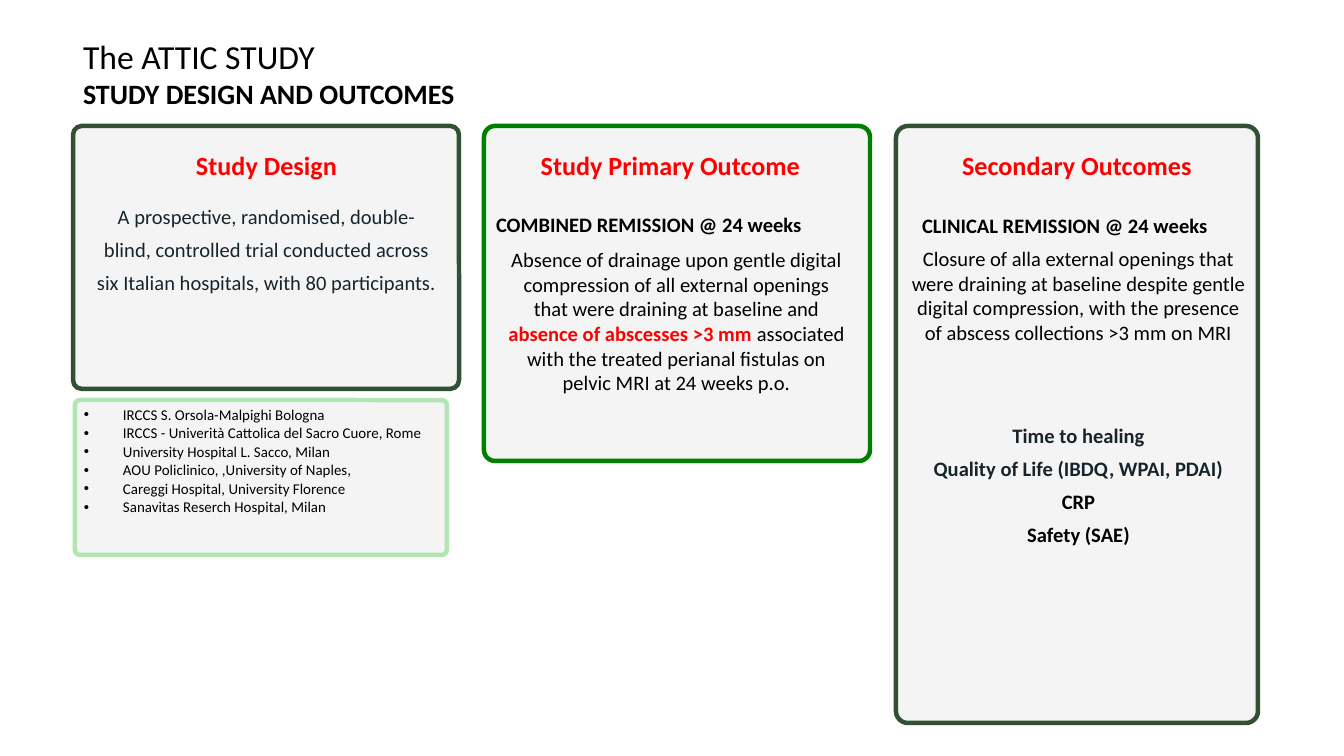
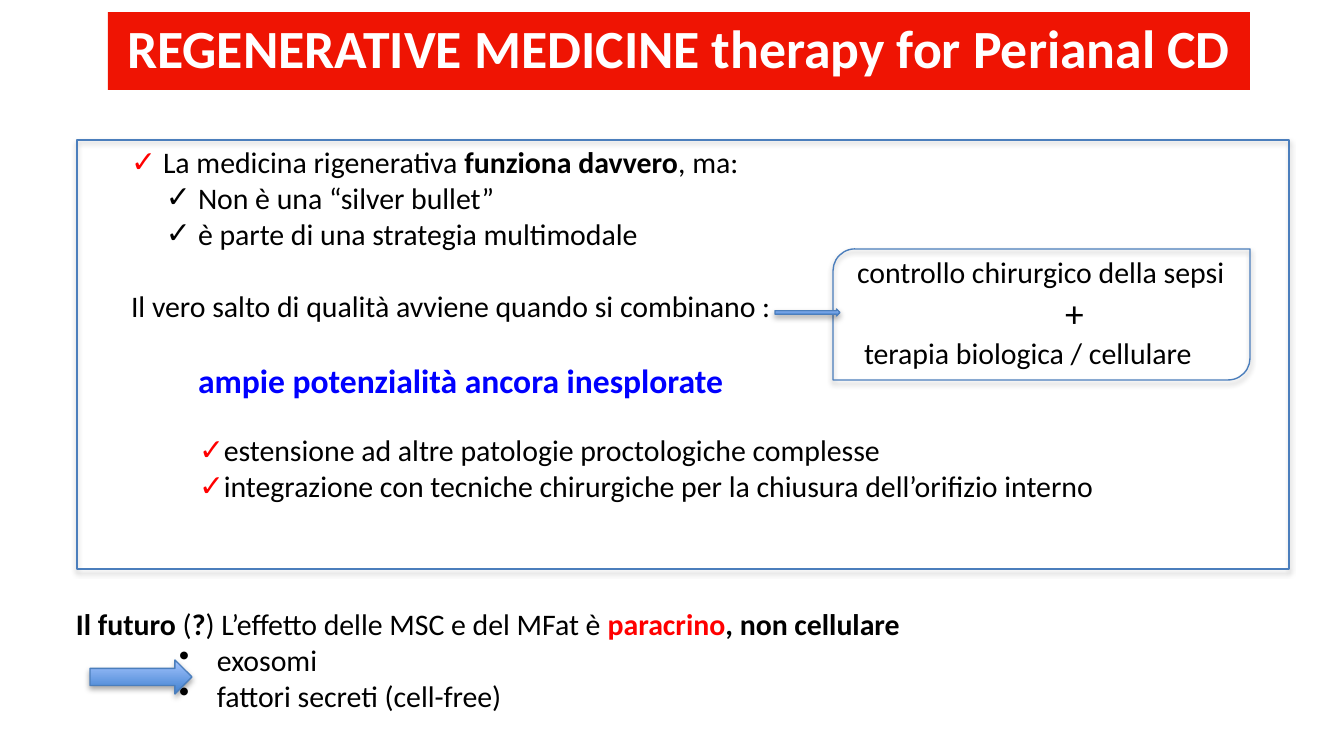
import pptx
import pptx.util
import pptx.dml.color
import pptx.enum.shapes
import pptx.enum.text
import pptx.oxml.ns
from lxml import etree

PX = 914400 / 134.4
FONT = "Calibri"
COLOURS = {
    "black": "000000", "white": "FFFFFF", "ink": "18242B", "red": "FF0000",
    "banner": "EF1403", "panel": "F4F4F4", "forest": "325034", "green": "008000",
    "mint": "B2E5B2", "blue": "0000FF", "outline": "4B7EBC",
    "arrow_low": "3F80CE", "arrow_high": "A4C4FF",
}
FLUSH = (0, 0, 0, 0)
SNUG = (9, 5, 9, 5)
ROOMY = (13, 7, 13, 7)
SHAPE = pptx.enum.shapes.MSO_SHAPE
ANCHOR = pptx.enum.text.MSO_ANCHOR

STUDY_TITLE = [
    {"text": "The ATTIC STUDY", "size": 18},
    {"text": "STUDY DESIGN AND OUTCOMES", "size": 15, "bold": True},
]
CARDS = [
    ("Study Design", (73, 126, 386, 263), (136, 149, 261, 32), "forest"),
    ("Study Primary Outcome", (484, 126, 386, 335), (540, 149, 261, 32), "green"),
    ("Secondary Outcomes", (896, 126, 362, 597), (939, 149, 276, 32), "forest"),
]
DESIGN = ("A prospective, randomised, double-blind, controlled trial conducted "
          "across six Italian hospitals, with 80 participants.")
HOSPITALS = [
    "IRCCS S. Orsola-Malpighi Bologna",
    "IRCCS - Univerità Cattolica del Sacro Cuore, Rome",
    "University Hospital L. Sacco, Milan",
    "AOU Policlinico, ,University of Naples,",
    "Careggi Hospital, University Florence",
    "Sanavitas Reserch Hospital, Milan",
]
LABELS = [
    ("COMBINED REMISSION @ 24 weeks", (487, 207, 382, 35)),
    ("CLINICAL REMISSION @ 24 weeks", (913, 208, 382, 35)),
]
PRIMARY = [
    "Absence of drainage upon gentle digital compression of all external "
    "openings that were draining at baseline and",
    [("absence of abscesses >3 mm ", True, "red"),
     ("associated with the treated perianal fistulas on pelvic MRI at 24 weeks p.o.", False, "black")],
]
CLINICAL = ("Closure of alla external openings that were draining at baseline despite gentle "
            "digital compression, with the presence of abscess collections >3 mm on MRI")
OTHER_OUTCOMES = [
    ("Time to healing", "ink"),
    ("Quality of Life (IBDQ, WPAI, PDAI)", "ink"),
    ("CRP", "black"),
    ("Safety (SAE)", "black"),
]

THERAPY_TITLE = "REGENERATIVE MEDICINE therapy for Perianal CD"
CHECK = {"bullet": "✓", "margin": 67, "hang": 32}
RED_CHECK = {"bullet": "✓", "bullet_colour": "red"}
THERAPY_POINTS = [
    {"text": [("La medicina rigenerativa ", False, "black"), ("funziona davvero", True, "black"),
              (", ma:", False, "black")], "margin": 32, "hang": 32, **RED_CHECK},
    {"text": "Non è una “silver bullet”", **CHECK},
    {"text": "è parte di una strategia multimodale", **CHECK},
    {"text": "Il vero salto di qualità avviene quando si combinano :", "before": 19.5},
    {"text": "ampie potenzialità ancora inesplorate", "size": 18, "bold": True,
     "colour": "blue", "margin": 67, "before": 19.5},
    {"text": "estensione ad altre patologie proctologiche complesse",
     "margin": 92, "hang": 24, "before": 17, **RED_CHECK},
    {"text": "integrazione con tecniche chirurgiche per la chiusura dell’orifizio interno",
     "margin": 92, "hang": 24, **RED_CHECK},
]
COMBINATION = [
    {"text": "controllo chirurgico della sepsi", "margin": 128},
    {"text": "+", "size": 20, "margin": 336},
    {"text": "terapia biologica / cellulare", "margin": 135},
]
DOT = {"bullet": "•", "margin": 141, "hang": 38}
FUTURE = [
    {"text": [("Il futuro ", True, "black"), ("(", False, "black"), ("?", True, "black"),
              (") L’effetto delle MSC e del MFat è ", False, "black"),
              ("paracrino", True, "red"), (", non cellulare", True, "black")]},
    {"text": "exosomi", **DOT},
    {"text": "fattori secreti (cell-free)", **DOT},
]


def px(n):
    return pptx.util.Emu(round(n * PX))


def rgb(name):
    return pptx.dml.color.RGBColor.from_string(COLOURS[name])


def place(s, box):
    s.left, s.top, s.width, s.height = map(px, box)


def add_element(parent, tag, **attributes):
    child = etree.SubElement(parent, pptx.oxml.ns.qn(tag))
    for key, value in attributes.items():
        child.set(key, str(value))
    return child


def set_bullet(p, bullet, bullet_colour, margin, hang):
    pPr = p._p.get_or_add_pPr()
    pPr.set("marL", str(px(margin)))
    pPr.set("indent", str(px(-hang)))
    if bullet:
        add_element(add_element(pPr, "a:buClr"), "a:srgbClr", val=COLOURS[bullet_colour])
        add_element(pPr, "a:buChar", char=bullet)
    else:
        add_element(pPr, "a:buNone")


def write_paragraph(p, text, size=11, bold=False, colour="black", align="LEFT", spacing=1.0,
                    before=0, bullet=None, bullet_colour="black", margin=0, hang=0):
    set_bullet(p, bullet, bullet_colour, margin, hang)
    p.alignment = getattr(pptx.enum.text.PP_ALIGN, align)
    p.line_spacing = spacing
    p.space_before = pptx.util.Pt(before)
    p.space_after = pptx.util.Pt(0)
    p.font.name = FONT
    p.font.size = pptx.util.Pt(size)
    p.font.bold = bold
    p.font.color.rgb = rgb(colour)
    if isinstance(text, str):
        p.add_run().text = text
        return
    for words, run_bold, run_colour in text:
        r = p.add_run()
        r.text = words
        r.font.bold = run_bold
        r.font.color.rgb = rgb(run_colour)


def write(s, box, paragraphs, insets=FLUSH, anchor=ANCHOR.TOP, wrap=True, **style):
    place(s, box)
    tf = s.text_frame
    tf.auto_size = pptx.enum.text.MSO_AUTO_SIZE.NONE
    tf.word_wrap = wrap
    tf.vertical_anchor = anchor
    tf.margin_left, tf.margin_top, tf.margin_right, tf.margin_bottom = map(px, insets)
    for i, paragraph in enumerate(paragraphs):
        p = tf.add_paragraph() if i else tf.paragraphs[0]
        own = paragraph if isinstance(paragraph, dict) else {"text": paragraph}
        write_paragraph(p, **{**style, **own})


def add_text(slide, box, paragraphs, **style):
    s = slide.shapes.add_textbox(0, 0, 0, 0)
    write(s, box, paragraphs, **style)


def add_outline(slide, kind, box, colour, width):
    s = slide.shapes.add_shape(kind, *map(px, box))
    s.shadow.inherit = False
    s.fill.background()
    s.line.color.rgb = rgb(colour)
    s.line.width = pptx.util.Pt(width)
    return s


def add_card(slide, box, colour):
    s = add_outline(slide, SHAPE.ROUNDED_RECTANGLE, box, colour, 2.4)
    s.adjustments[0] = 0.033
    s.fill.solid()
    s.fill.fore_color.rgb = rgb("panel")


def add_raised(slide, kind, box):
    s = add_outline(slide, kind, box, "outline", 0.75)
    effects = s._element.spPr.find(pptx.oxml.ns.qn("a:effectLst"))
    shadow = add_element(effects, "a:outerShdw", blurRad=pptx.util.Pt(3.1),
                         dist=pptx.util.Pt(1.8), dir=5400000, rotWithShape=0)
    add_element(add_element(shadow, "a:srgbClr", val=COLOURS["black"]), "a:alpha", val=35000)
    return s


def add_arrow(slide, box):
    s = add_raised(slide, SHAPE.RIGHT_ARROW, box)
    s.fill.gradient()
    s.fill.gradient_angle = 90
    for stop, name in zip(s.fill.gradient_stops, ("arrow_low", "arrow_high")):
        stop.color.rgb = rgb(name)


def build_study(slide):
    write(slide.shapes.title, (74, 31, 564, 85), STUDY_TITLE, insets=SNUG)
    for heading, box, heading_box, colour in CARDS:
        add_card(slide, box, colour)
        add_text(slide, heading_box, [heading], size=14, bold=True, colour="red",
                 align="CENTER", spacing=pptx.util.Pt(17.2), wrap=False)
    loose = {"align": "CENTER", "spacing": pptx.util.Pt(17.8)}
    add_text(slide, (97, 195, 339, 133), [DESIGN], colour="ink", **loose)
    add_text(slide, (909, 414, 339, 163),
             [{"text": text, "colour": colour} for text, colour in OTHER_OUTCOMES],
             bold=True, **loose)
    for label, box in LABELS:
        add_text(slide, box, [label], insets=SNUG, bold=True)
    add_text(slide, (507, 247, 339, 133), PRIMARY, align="CENTER")
    add_text(slide, (909, 246, 339, 133), [CLINICAL], align="CENTER")

    hospitals_box = (75, 400, 372, 155)
    add_card(slide, hospitals_box, "mint")
    body = slide.placeholders[1]
    slide.shapes._spTree.append(body._element)
    write(body, hospitals_box, HOSPITALS, insets=SNUG, size=8,
          spacing=pptx.util.Pt(9.9), bullet="•", margin=39, hang=39)


def build_therapy(slide):
    title = slide.shapes.title
    write(title, (108, 12, 1142, 78), [THERAPY_TITLE], insets=ROOMY, anchor=ANCHOR.MIDDLE,
          size=28.8, bold=True, colour="white", align="CENTER", spacing=0.9)
    title.fill.solid()
    title.fill.fore_color.rgb = rgb("banner")
    roomy = {"insets": ROOMY, "size": 16}
    write(slide.placeholders[1], (118, 137, 1081, 375), THERAPY_POINTS, **roomy)
    add_text(slide, (63, 525, 1230, 195), FUTURE, anchor=ANCHOR.BOTTOM, **roomy)
    add_text(slide, (716, 247, 571, 132), COMBINATION, **roomy)
    add_raised(slide, SHAPE.RECTANGLE, (77, 140, 1212, 429))
    add_raised(slide, SHAPE.ROUND_2_DIAG_RECTANGLE, (833, 249, 417, 131))
    for box in [(90, 660, 102, 34), (775, 309, 65, 7)]:
        add_arrow(slide, box)


def main():
    prs = pptx.Presentation()
    prs.slide_width, prs.slide_height = px(1344), px(756)
    for build in (build_study, build_therapy):
        build(prs.slides.add_slide(prs.slide_layouts[1]))
    prs.save("out.pptx")


if __name__ == "__main__":
    main()
